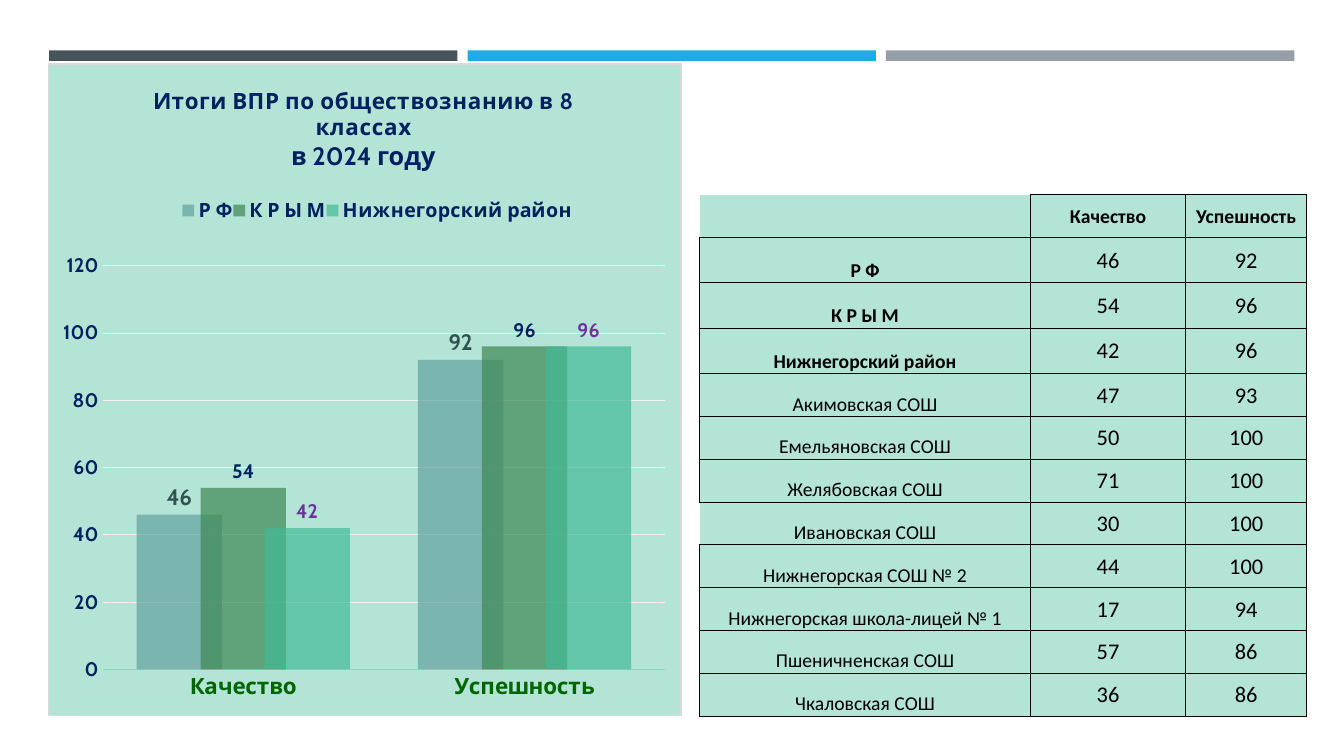
from lxml.etree import fromstring
from pptx import Presentation
from pptx.chart.data import CategoryChartData
from pptx.dml.color import RGBColor
from pptx.enum.chart import XL_CHART_TYPE, XL_LABEL_POSITION, XL_LEGEND_POSITION, XL_TICK_MARK
from pptx.enum.shapes import MSO_SHAPE
from pptx.enum.text import MSO_ANCHOR, PP_ALIGN
from pptx.oxml.ns import nsdecls, qn
from pptx.util import Inches, Pt

COLORS = {
    "slate": "465359", "blue": "1CADE4", "gray": "969FA7", "mint": "B3E4D6",
    "frame": "D9D9D9", "axis": "BFBFBF", "grid": "F2F2F2", "navy": "002060",
    "green": "006600", "black": "000000", "teal": "62A39F", "leaf": "3E8853",
    "sea": "42BA97", "pine": "305250", "violet": "7030A0",
}
REGIONS = [("Р Ф", 46, 92), ("К Р Ы М", 54, 96), ("Нижнегорский район", 42, 96)]
SCHOOLS = [
    ("Акимовская СОШ", 47, 93), ("Емельяновская СОШ", 50, 100),
    ("Желябовская СОШ", 71, 100), ("Ивановская СОШ", 30, 100),
    ("Нижнегорская СОШ № 2", 44, 100), ("Нижнегорская школа-лицей № 1", 17, 94),
    ("Пшеничненская СОШ", 57, 86), ("Чкаловская СОШ", 36, 86),
]
MEASURES = ["Качество", "Успешность"]
# Bar colour, label colour and label size of each region
SERIES_STYLE = [("teal", "pine", 16), ("leaf", "navy", 14), ("sea", "violet", 14)]


def color(name):
    return RGBColor.from_string(COLORS[name])


def assign(obj, **values):
    for name, value in values.items():
        setattr(obj, name, value)


class SlideBuilder:
    """Places elements on a grid of 160 columns by 90 rows."""
    UNIT = 1 / 12

    def __init__(self, prs):
        self.s = prs.slides.add_slide(prs.slide_layouts[6])

    def grid(self, *cells):
        return [Inches(n * self.UNIT) for n in cells]

    def font(self, font, size, tint, bold=True, name="Cabin"):
        assign(font, size=Pt(size), bold=bold, name=name)
        font.color.rgb = color(tint)

    def line(self, line, tint, width):
        line.color.rgb = color(tint)
        line.width = Pt(width)

    def bar(self, box, tint):
        sp = self.s.shapes.add_shape(MSO_SHAPE.RECTANGLE, *self.grid(*box))
        sp.shadow.inherit = False
        sp.fill.solid()
        sp.fill.fore_color.rgb = color(tint)
        sp.line.fill.background()

    def layout(self, parent, index, target="", **shares):
        """Fix a chart part at shares of the chart's size."""
        old = parent.find(qn("c:layout"))
        if old is not None:
            parent.remove(old)
        inner = f'<c:layoutTarget val="{target}"/>' if target else ""
        modes = '<c:xMode val="edge"/><c:yMode val="edge"/>'
        sizes = "".join(f'<c:{k} val="{v}"/>' for k, v in shares.items())
        parent.insert(index, fromstring(
            f'<c:layout {nsdecls("c")}><c:manualLayout>{inner}{modes}{sizes}'
            '</c:manualLayout></c:layout>'))

    def chart(self, box, title_lines):
        data = CategoryChartData(number_format="0")
        data.categories = MEASURES
        for name, *values in REGIONS:
            data.add_series(name, values)
        chart = self.s.shapes.add_chart(
            XL_CHART_TYPE.COLUMN_CLUSTERED, *self.grid(*box), data).chart
        self.font(chart.font, 10, "black", False)
        space = chart._chartSpace
        space.find(qn("c:chart")).addnext(fromstring(
            f'<c:spPr {nsdecls("c", "a")}><a:solidFill><a:srgbClr val="{COLORS["mint"]}"/>'
            f'</a:solidFill><a:ln w="9525"><a:solidFill><a:srgbClr val="{COLORS["frame"]}"/>'
            '</a:solidFill></a:ln></c:spPr>'))

        # Title
        chart.has_title = True
        tf = chart.chart_title.text_frame
        for i, (text, size, spacing) in enumerate(title_lines):
            p = tf.add_paragraph() if i else tf.paragraphs[0]
            p.alignment = PP_ALIGN.CENTER
            r = p.add_run()
            r.text = text
            self.font(r.font, size, "navy")
            r.font._element.set("spc", str(spacing))
        self.layout(chart.chart_title._element, 1, x=0.16, y=0.03)

        # Legend and plot area
        chart.has_legend = True
        assign(chart.legend, position=XL_LEGEND_POSITION.TOP, include_in_layout=False)
        self.font(chart.legend.font, 14, "navy")
        self.layout(chart.legend._element, 1, x=0.21, y=0.18, w=0.62, h=0.09)
        self.layout(space.find(".//" + qn("c:plotArea")), 0, "inner",
                    x=0.085, y=0.31, w=0.89, h=0.62)

        # Axes
        cat, val = chart.category_axis, chart.value_axis
        for axis, size, tint in ((cat, 16, "green"), (val, 14, "navy")):
            assign(axis, major_tick_mark=XL_TICK_MARK.NONE, minor_tick_mark=XL_TICK_MARK.NONE)
            self.font(axis.tick_labels.font, size, tint)
        self.line(cat.format.line, "axis", 1.25)
        assign(val, minimum_scale=0, maximum_scale=120, major_unit=20, has_major_gridlines=True)
        self.line(val.major_gridlines.format.line, "grid", 0.75)
        val.format.line.fill.background()

        # Columns
        plot = chart.plots[0]
        assign(plot, gap_width=80, overlap=25, vary_by_categories=False)
        for ser, (tint, label_tint, size) in zip(plot.series, SERIES_STYLE):
            ser.format.fill.solid()
            ser.format.fill.fore_color.rgb = color(tint)
            ser._element.find(".//" + qn("a:srgbClr")).append(
                fromstring(f'<a:alpha {nsdecls("a")} val="70000"/>'))
            assign(ser.data_labels, show_value=True, number_format="0",
                   number_format_is_linked=False, position=XL_LABEL_POSITION.OUTSIDE_END)
            self.font(ser.data_labels.font, size, label_tint)

    def borders(self, cell, hidden):
        tcPr = cell._tc.get_or_add_tcPr()
        for i, side in enumerate("LRTB"):
            paint = ("<a:noFill/>" if side in hidden else
                     f'<a:solidFill><a:srgbClr val="{COLORS["black"]}"/></a:solidFill>')
            tcPr.insert(i, fromstring(
                f'<a:ln{side} {nsdecls("a")} w="6350">{paint}</a:ln{side}>'))

    def table(self, box, rows, widths, heights, open_sides):
        table = self.s.shapes.add_table(len(rows), len(widths), *self.grid(*box)).table
        assign(table, first_row=False, horz_banding=False)
        for col, width in zip(table.columns, self.grid(*widths)):
            col.width = width
        for row, height in zip(table.rows, self.grid(*heights)):
            row.height = height
        for i, values in enumerate(rows):
            for j, value in enumerate(values):
                cell = table.cell(i, j)
                is_name = i > 0 and j == 0
                assign(cell, margin_left=Inches(0.01), margin_right=Inches(0.01),
                       margin_top=Inches(0.01), margin_bottom=0,
                       vertical_anchor=MSO_ANCHOR.BOTTOM if is_name else MSO_ANCHOR.MIDDLE)
                cell.fill.solid()
                cell.fill.fore_color.rgb = color("mint")
                self.borders(cell, open_sides.get((i, j), ""))
                if value == "":
                    continue
                p = cell.text_frame.paragraphs[0]
                p.alignment = PP_ALIGN.CENTER
                r = p.add_run()
                r.text = str(value)
                is_number = i > 0 and j > 0
                self.font(r.font, 16 if is_number else 14, "black",
                          not is_number and i <= len(REGIONS), "Calibri")


def main():
    prs = Presentation()
    assign(prs, slide_width=Inches(13.33), slide_height=Inches(7.5))
    s = SlideBuilder(prs)

    # Header bars
    for i, tint in enumerate(("slate", "blue", "gray")):
        s.bar((5.85 + 49.8 * i, 6, 48.6, 1.25), tint)

    # Results chart
    s.chart((5.76, 7.56, 75.36, 77.64), [
        ("Итоги ВПР по обществознанию в 8 классах", 16, 50),
        ("в 2024 году", 18, 0)])

    # Results table
    rows = [("", *MEASURES), *REGIONS, *SCHOOLS]
    heights = [5.1] + [5.4] * len(REGIONS) + [5.1] * len(SCHOOLS)
    s.table((83.28, 23.16, 72.24, sum(heights)), rows, (39.36, 18.48, 14.4), heights,
            {(0, 0): "LT", (7, 0): "L"})

    prs.save("out.pptx")


if __name__ == "__main__":
    main()
